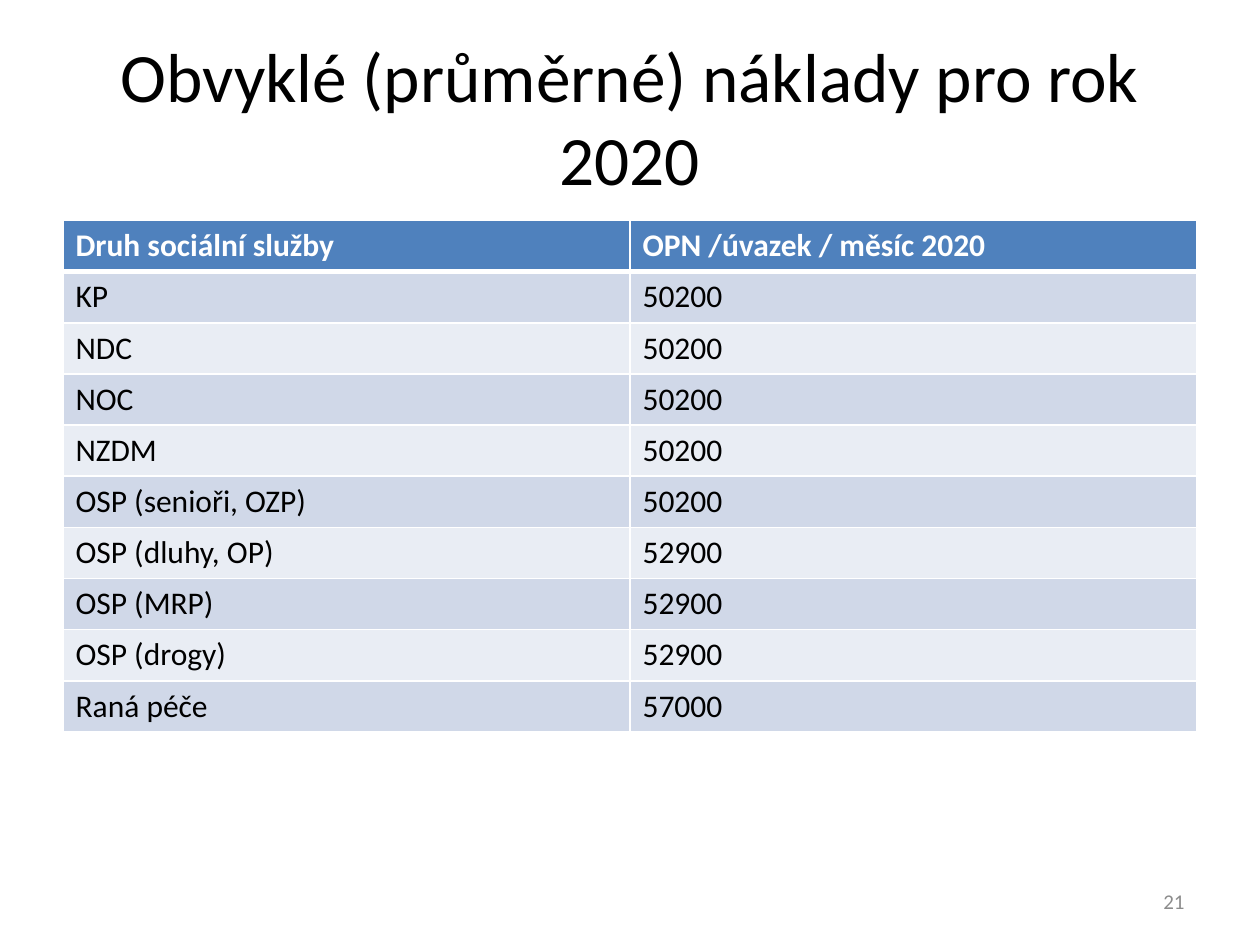
import pptx
import pptx.dml.color
import pptx.enum.text
import pptx.oxml.ns
import pptx.util
from lxml import etree

Inches, Pt = pptx.util.Inches, pptx.util.Pt
RGBColor = pptx.dml.color.RGBColor
PP_ALIGN = pptx.enum.text.PP_ALIGN
MSO_ANCHOR = pptx.enum.text.MSO_ANCHOR
qn = pptx.oxml.ns.qn

# Content
TITLE = "Obvyklé (průměrné) náklady pro rok 2020"
PAGE_NUMBER = "21"
HEADER = ("Druh sociální služby", "OPN /úvazek / měsíc 2020")
COSTS = [
    ("KP", 50200),
    ("NDC", 50200),
    ("NOC", 50200),
    ("NZDM", 50200),
    ("OSP (senioři, OZP)", 50200),
    ("OSP (dluhy, OP)", 52900),
    ("OSP (MRP)", 52900),
    ("OSP (drogy)", 52900),
    ("Raná péče", 57000),
]

# Style
FONT = "Calibri"
BLACK = RGBColor(0x00, 0x00, 0x00)
WHITE = RGBColor(0xFF, 0xFF, 0xFF)
GRAY = RGBColor(0x8C, 0x8C, 0x8C)
HEADER_FILL = RGBColor(0x4F, 0x81, 0xBD)
BAND_FILLS = (RGBColor(0xD0, 0xD8, 0xE8), RGBColor(0xE9, 0xED, 0xF4))
MARGIN, WIDTH, ROW_HEIGHT = 0.5, 9, 0.406


def style_text(tf, size, color, bold=False):
    for p in tf.paragraphs:
        for r in p.runs:
            r.font.name = FONT
            r.font.size = Pt(size)
            r.font.bold = bold
            r.font.color.rgb = color


def add_text(slide, text, left, top, width, height, size, color, align):
    sp = slide.shapes.add_textbox(Inches(left), Inches(top), Inches(width), Inches(height))
    tf = sp.text_frame
    tf.word_wrap = True
    tf.vertical_anchor = MSO_ANCHOR.MIDDLE
    tf.text = text
    tf.paragraphs[0].alignment = align
    style_text(tf, size, color)


def set_borders(cell, top, bottom):
    tc_pr = cell._tc.get_or_add_tcPr()
    for side, width in (("lnL", 1), ("lnR", 1), ("lnT", top), ("lnB", bottom)):
        ln = etree.SubElement(tc_pr, qn("a:" + side), w=str(Pt(width)))
        fill = etree.SubElement(ln, qn("a:solidFill"))
        etree.SubElement(fill, qn("a:srgbClr"), val=str(WHITE))


prs = pptx.Presentation()
prs.slide_width, prs.slide_height = Inches(10), Inches(7.5)
s = prs.slides.add_slide(prs.slide_layouts[6])

# Title
add_text(s, TITLE, MARGIN, 0.3, WIDTH, 1.25, 39.6, BLACK, PP_ALIGN.CENTER)

# Cost table
rows = [HEADER] + COSTS
table = s.shapes.add_table(
    len(rows), len(HEADER), Inches(MARGIN), Inches(1.75),
    Inches(WIDTH), Inches(ROW_HEIGHT * len(rows))).table
for i, values in enumerate(rows):
    is_header = i == 0
    for j, value in enumerate(values):
        cell = table.cell(i, j)
        cell.text = str(value)
        style_text(cell.text_frame, 18, WHITE if is_header else BLACK, is_header)
        set_borders(cell, 3 if i == 1 else 1, 3 if is_header else 1)
        cell.fill.solid()
        cell.fill.fore_color.rgb = HEADER_FILL if is_header else BAND_FILLS[(i - 1) % 2]

# Page number
add_text(s, PAGE_NUMBER, 7.17, 6.95, 2.33, 0.4, 12, GRAY, PP_ALIGN.RIGHT)

prs.save("out.pptx")
